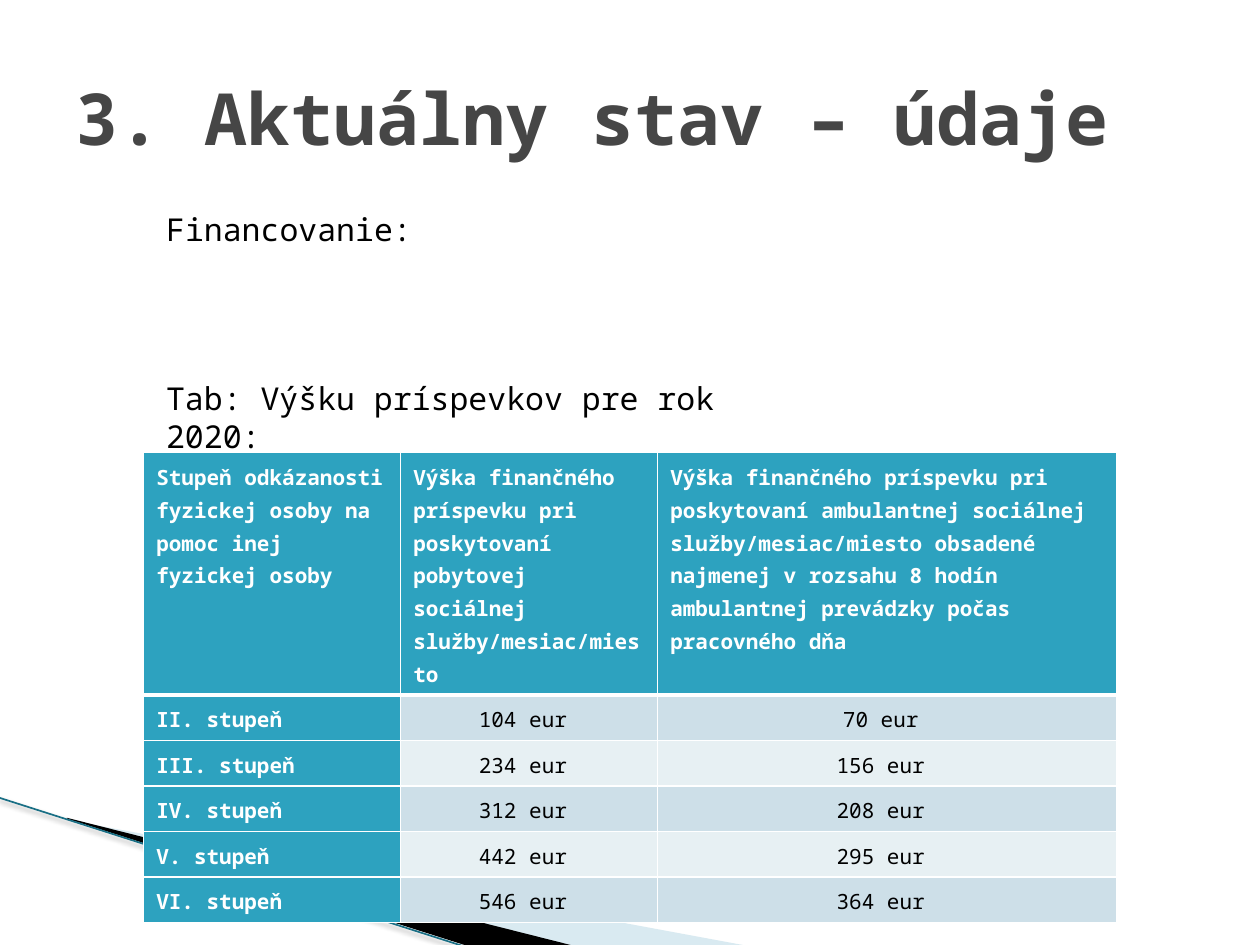
import lxml.etree
import pptx
import pptx.dml.color
import pptx.enum.shapes
import pptx.enum.text
import pptx.oxml.ns
import pptx.util

Inches = pptx.util.Inches
Pt = pptx.util.Pt
RGB = pptx.dml.color.RGBColor
Align = pptx.enum.text.PP_ALIGN
Anchor = pptx.enum.text.MSO_ANCHOR
qn = pptx.oxml.ns.qn

WHITE = RGB(0xFF, 0xFF, 0xFF)
BLACK = RGB(0x00, 0x00, 0x00)
GREY = RGB(0x46, 0x46, 0x46)
TEAL = RGB(0x2D, 0xA2, 0xBF)
DEEP = RGB(0x19, 0x6F, 0x85)
PALE = RGB(0xA0, 0xCB, 0xDC)
BANDS = RGB(0xCD, 0xDF, 0xE8), RGB(0xE7, 0xF0, 0xF3)

HEADS = [
    "Stupeň odkázanosti fyzickej osoby na pomoc inej fyzickej osoby",
    "Výška finančného príspevku pri poskytovaní pobytovej sociálnej "
    "služby/mesiac/miesto",
    "Výška finančného príspevku pri poskytovaní ambulantnej sociálnej "
    "služby/mesiac/miesto obsadené najmenej v rozsahu 8 hodín ambulantnej "
    "prevádzky počas pracovného dňa",
]
RATES = [("II", 104, 70), ("III", 234, 156), ("IV", 312, 208),
         ("V", 442, 295), ("VI", 546, 364)]


def add(parent, tag, **attrs):
    """Append an XML child with the given attributes."""
    return lxml.etree.SubElement(
        parent, qn(tag), {key: str(val) for key, val in attrs.items()})


class Deck:
    font = "Noto Sans Mono"
    rule = 0.96

    def __init__(self, slide):
        self.slide = slide
        self.shapes = slide.shapes

    def label(self, para, text, size, color, bold=False, **form):
        """Fill a paragraph with one styled run."""
        for key, val in form.items():
            setattr(para, key, val)
        run = para.add_run()
        run.text = text
        look = {"name": self.font, "size": Pt(size), "bold": bold}
        for key, val in look.items():
            setattr(run.font, key, val)
        run.font.color.rgb = color

    def text(self, box, text, size, color, bold=False, anchor=Anchor.TOP):
        frame = self.shapes.add_textbox(*map(Inches, box)).text_frame
        frame.word_wrap = True
        frame.vertical_anchor = anchor
        self.label(frame.paragraphs[0], text, size, color, bold)

    def wedge(self, points, color, alpha=None):
        spots = [(Inches(x), Inches(y)) for x, y in points]
        draft = self.shapes.build_freeform(*spots[0], scale=1.0)
        draft.add_line_segments(spots[1:], close=True)
        shape = draft.convert_to_shape()
        shape.shadow.inherit = False
        shape.line.fill.background()
        shape.fill.solid()
        shape.fill.fore_color.rgb = color
        if alpha:
            tint = shape._element.spPr.find(
                qn("a:solidFill") + "/" + qn("a:srgbClr"))
            add(tint, "a:alpha", val=alpha * 1000)

    def line(self, start, end, color):
        line = self.shapes.add_connector(
            pptx.enum.shapes.MSO_CONNECTOR.STRAIGHT,
            *map(Inches, start + end))
        line.line.width = Pt(self.rule)
        line.line.color.rgb = color
        glow = add(add(line._element.spPr, "a:effectLst"), "a:outerShdw",
                   blurRad=Pt(3.1), dist=Pt(1.6), dir=90 * 60000,
                   algn="tl", rotWithShape=0)
        add(add(glow, "a:srgbClr", val=BLACK), "a:alpha", val=38000)

    def edge(self, cell, **wide):
        """Draw white borders; wide gives other widths by side."""
        props = cell._tc.get_or_add_tcPr()
        for side in "LRTB":
            ln = add(props, "a:ln" + side, w=Pt(wide.get(side, self.rule)))
            add(add(ln, "a:solidFill"), "a:srgbClr", val=WHITE)

    def cell(self, cell, text, fill, color, bold, align, **wide):
        self.edge(cell, **wide)
        cell.fill.solid()
        cell.fill.fore_color.rgb = fill
        self.label(cell.text_frame.paragraphs[0], text, 12, color, bold,
                   alignment=align, line_spacing=1.15, space_after=Pt(10))

    def table(self, box, rows, widths, heights):
        grid = self.shapes.add_table(
            len(rows), len(widths), *map(Inches, box)).table
        for col, width in zip(grid.columns, widths):
            col.width = Inches(width)
        for row, height in zip(grid.rows, heights):
            row.height = Inches(height)
        for r, row in enumerate(rows):
            wide = {0: {"B": 3}, 1: {"T": 3}}.get(r, {})
            for c, text in enumerate(row):
                if r == 0 or c == 0:
                    form = TEAL, WHITE, True, Align.LEFT
                else:
                    form = BANDS[(r - 1) % 2], BLACK, False, Align.CENTER
                self.cell(grid.cell(r, c), text, *form, **wide)


def main():
    show = pptx.Presentation()
    show.slide_width, show.slide_height = Inches(10), Inches(7.5)
    deck = Deck(show.slides.add_slide(show.slide_layouts[6]))

    deck.wedge([(0.55, 6.51), (5.95, 7.51), (4.56, 7.51), (0.55, 6.5)],
               PALE, 40)
    deck.wedge([(0.53, 6.49), (4.57, 7.51), (3.72, 7.51), (0.54, 6.5)],
               BLACK)
    deck.line((-0.01, 6.33), (3.71, 7.52), DEEP)

    rows = [HEADS] + [[f"{step}. stupeň", f"{stay} eur ", f"{day} eur "]
                      for step, stay, day in RATES]
    deck.table((1.14, 3.59, 7.72, 3.05), rows, [2.04, 2.04, 3.64],
               [1.45] + [0.32] * len(RATES))

    deck.text((0.5, 0.3, 9, 1.25), "3. Aktuálny stav – údaje", 41, GREY,
              True, Anchor.MIDDLE)
    deck.text((1.22, 2.96, 4.73, 0.4),
              "Tab: Výšku príspevkov pre rok 2020:", 18, BLACK)
    deck.text((1.22, 1.62, 8.19, 0.4), "Financovanie:", 18, BLACK)
    show.save("out.pptx")


if __name__ == "__main__":
    main()
